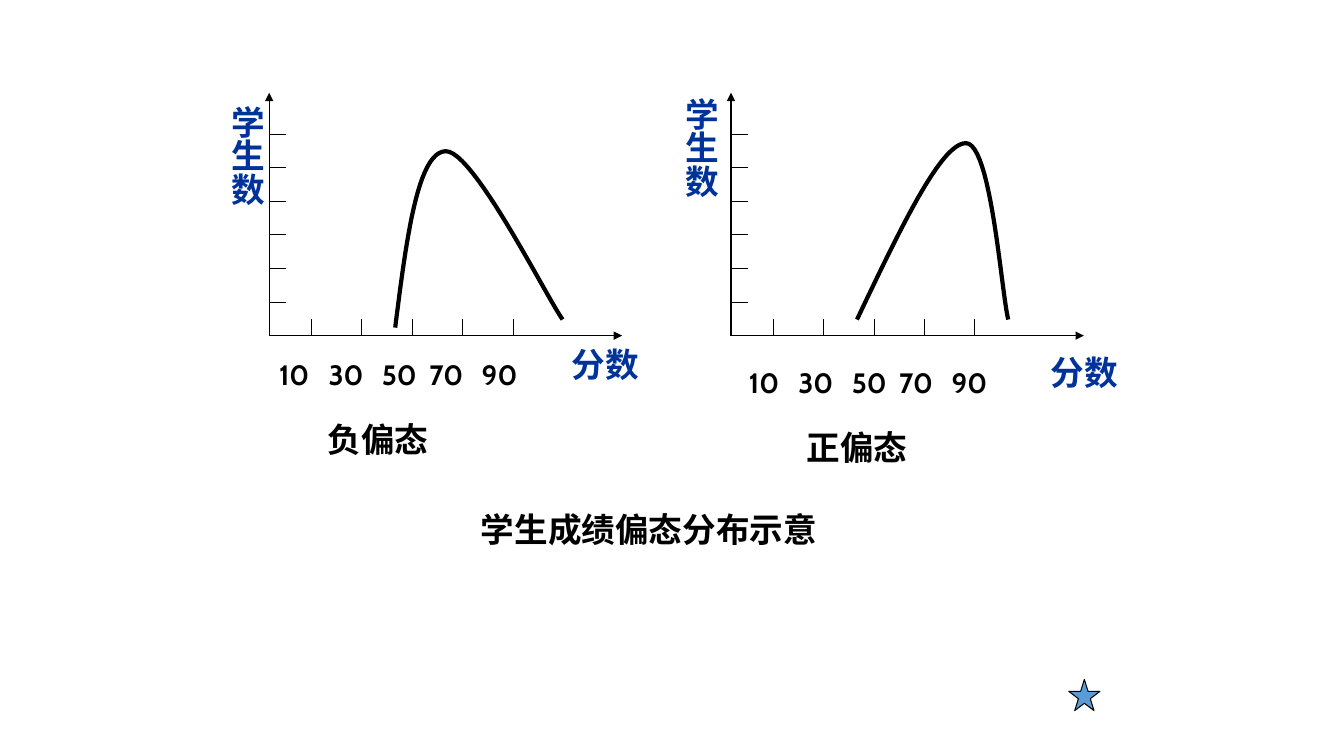
from dataclasses import dataclass

from lxml import etree
from pptx import Presentation
from pptx.dml.color import RGBColor
from pptx.enum.shapes import MSO_CONNECTOR, MSO_SHAPE
from pptx.enum.text import MSO_ANCHOR, MSO_AUTO_SIZE, PP_ALIGN
from pptx.oxml.ns import qn
from pptx.util import Inches, Pt

STRAIGHT = MSO_CONNECTOR.STRAIGHT
STAR = MSO_SHAPE.STAR_5_POINT
TOP = MSO_ANCHOR.TOP
FIT_SHAPE = MSO_AUTO_SIZE.SHAPE_TO_FIT_TEXT
NO_FIT = MSO_AUTO_SIZE.NONE
LEFT = PP_ALIGN.LEFT

# Content: places are left, top, width, height; curves are cubic segments
CAPTION = ("学生成绩偏态分布示意", (4.67, 5, 3.57, 0.5))
COUNT_AXIS = "学生数"
SCORE_AXIS = "分数"
SCORES = ["10", "30", "50", "70", "90"]
STAR_PLACE = (10.6, 6.74, 0.31, 0.31)
PLOTS = [
    {
        "name": "负偏态", "origin": 2.67,
        "name_place": (3.15, 4.11, 1.21, 0.5),
        "count_place": (2.09, 0.95, 0.61, 1.09),
        "score_place": (5.57, 3.36, 0.88, 0.5),
        "scores_place": (2.67, 3.5, 3.2, 0.43),
        "curve": [
            [(3.92, 3.25), (4.03, 2.38), (4.14, 1.51), (4.42, 1.5)],
            [(4.42, 1.5), (4.69, 1.49), (5.39, 2.89), (5.58, 3.17)],
        ],
    },
    {
        "name": "正偏态", "origin": 7.25,
        "name_place": (7.9, 4.19, 1.21, 0.5),
        "count_place": (6.59, 0.87, 0.61, 1.09),
        "score_place": (10.32, 3.44, 0.88, 0.5),
        "scores_place": (7.33, 3.58, 3.2, 0.43),
        "curve": [
            [(8.5, 3.17), (8.92, 2.29), (9.33, 1.42), (9.58, 1.42)],
            [(9.58, 1.42), (9.83, 1.42), (9.93, 2.88), (10, 3.17)],
        ],
    },
]

# Axis geometry in inches
BASELINE, AXIS_TOP, AXIS_LENGTH = 3.33, 0.92, 3.5
TICK, COUNT_STEP, COUNT_TICKS = 1 / 6, 1 / 3, 6
FIRST_SCORE, SCORE_STEP = 0.42, 0.5
SCORE_TABS = [0.49, 1.02, 1.49, 2.01]
CURVE_STEPS = 24


@dataclass(frozen=True)
class Theme:
    font: str = "Cabin"
    ink: RGBColor = RGBColor(0, 0, 0)
    axis_title: RGBColor = RGBColor(0x00, 0x33, 0x99)
    star: RGBColor = RGBColor(0x5B, 0x9B, 0xD5)
    label_size: int = 24
    score_size: int = 20
    thin: float = 0.75
    thick: float = 3


THEME = Theme()


def write(frame, text, size=THEME.label_size, color=THEME.ink):
    paragraph = frame.paragraphs[0]
    paragraph.alignment = LEFT
    run = paragraph.add_run()
    run.text = text
    run.font.name = THEME.font
    run.font.size = Pt(size)
    run.font.bold = True
    run.font.color.rgb = color
    return paragraph


def add_label(slide, text, place, color=THEME.ink):
    frame = slide.shapes.add_textbox(*map(Inches, place)).text_frame
    frame.word_wrap = False
    frame.auto_size = FIT_SHAPE
    write(frame, text, color=color)
    return frame


def add_scores(slide, place):
    frame = slide.shapes.add_textbox(*map(Inches, place)).text_frame
    frame.word_wrap = True
    paragraph = write(frame, "\t".join(SCORES), THEME.score_size)
    properties = paragraph._p.get_or_add_pPr()
    tabs = etree.SubElement(properties, qn("a:tabLst"))
    for stop in SCORE_TABS:
        etree.SubElement(tabs, qn("a:tab"), pos=str(Inches(stop)), algn="l")


def add_line(slide, start, end, arrow=False):
    line = slide.shapes.add_connector(STRAIGHT, *map(Inches, start + end))
    line.line.color.rgb = THEME.ink
    line.line.width = Pt(THEME.thin)
    if arrow:
        outline = line.line._get_or_add_ln()
        etree.SubElement(outline, qn("a:tailEnd"), type="triangle")
    etree.SubElement(line._element.spPr, qn("a:effectLst"))


def bezier(segment, t):
    weights = ((1 - t) ** 3, 3 * t * (1 - t) ** 2, 3 * t * t * (1 - t), t ** 3)
    return tuple(Inches(sum(w * p[axis] for w, p in zip(weights, segment)))
                 for axis in (0, 1))


def add_curve(slide, segments):
    points = [bezier(segment, step / CURVE_STEPS)
              for segment in segments for step in range(1, CURVE_STEPS + 1)]
    builder = slide.shapes.build_freeform(*bezier(segments[0], 0))
    builder.add_line_segments(points, close=False)
    curve = builder.convert_to_shape()
    curve.shadow.inherit = False
    curve.fill.background()
    curve.line.color.rgb = THEME.ink
    curve.line.width = Pt(THEME.thick)


def add_plot(slide, plot):
    x0 = plot["origin"]
    # Axes and ticks
    add_line(slide, (x0, BASELINE), (x0, AXIS_TOP), arrow=True)
    add_line(slide, (x0, BASELINE), (x0 + AXIS_LENGTH, BASELINE), arrow=True)
    for i in range(1, COUNT_TICKS + 1):
        y = BASELINE - i * COUNT_STEP
        add_line(slide, (x0, y), (x0 + TICK, y))
    for i in range(len(SCORES)):
        x = x0 + FIRST_SCORE + i * SCORE_STEP
        add_line(slide, (x, BASELINE), (x, BASELINE - TICK))
    # Distribution and labels
    add_curve(slide, plot["curve"])
    count = add_label(slide, COUNT_AXIS, plot["count_place"], THEME.axis_title)
    count._txBody.bodyPr.set("vert", "eaVert")
    add_label(slide, SCORE_AXIS, plot["score_place"], THEME.axis_title)
    add_scores(slide, plot["scores_place"])
    add_label(slide, plot["name"], plot["name_place"])


def add_caption(slide):
    text, place = CAPTION
    caption = slide.shapes.title
    caption.left, caption.top, caption.width, caption.height = map(Inches, place)
    frame = caption.text_frame
    frame.word_wrap = False
    frame.auto_size = NO_FIT
    frame.vertical_anchor = TOP
    write(frame, text)


def add_star(slide):
    star = slide.shapes.add_shape(STAR, *map(Inches, STAR_PLACE))
    star.shadow.inherit = False
    star.fill.solid()
    star.fill.fore_color.rgb = THEME.star
    star.line.color.rgb = THEME.ink
    star.line.width = Pt(THEME.thin)


def main():
    deck = Presentation()
    deck.slide_width, deck.slide_height = Inches(13.33), Inches(7.5)
    slide = deck.slides.add_slide(deck.slide_layouts.get_by_name("Title Only"))
    for plot in PLOTS:
        add_plot(slide, plot)
    add_caption(slide)
    add_star(slide)
    deck.save("out.pptx")


if __name__ == "__main__":
    main()
